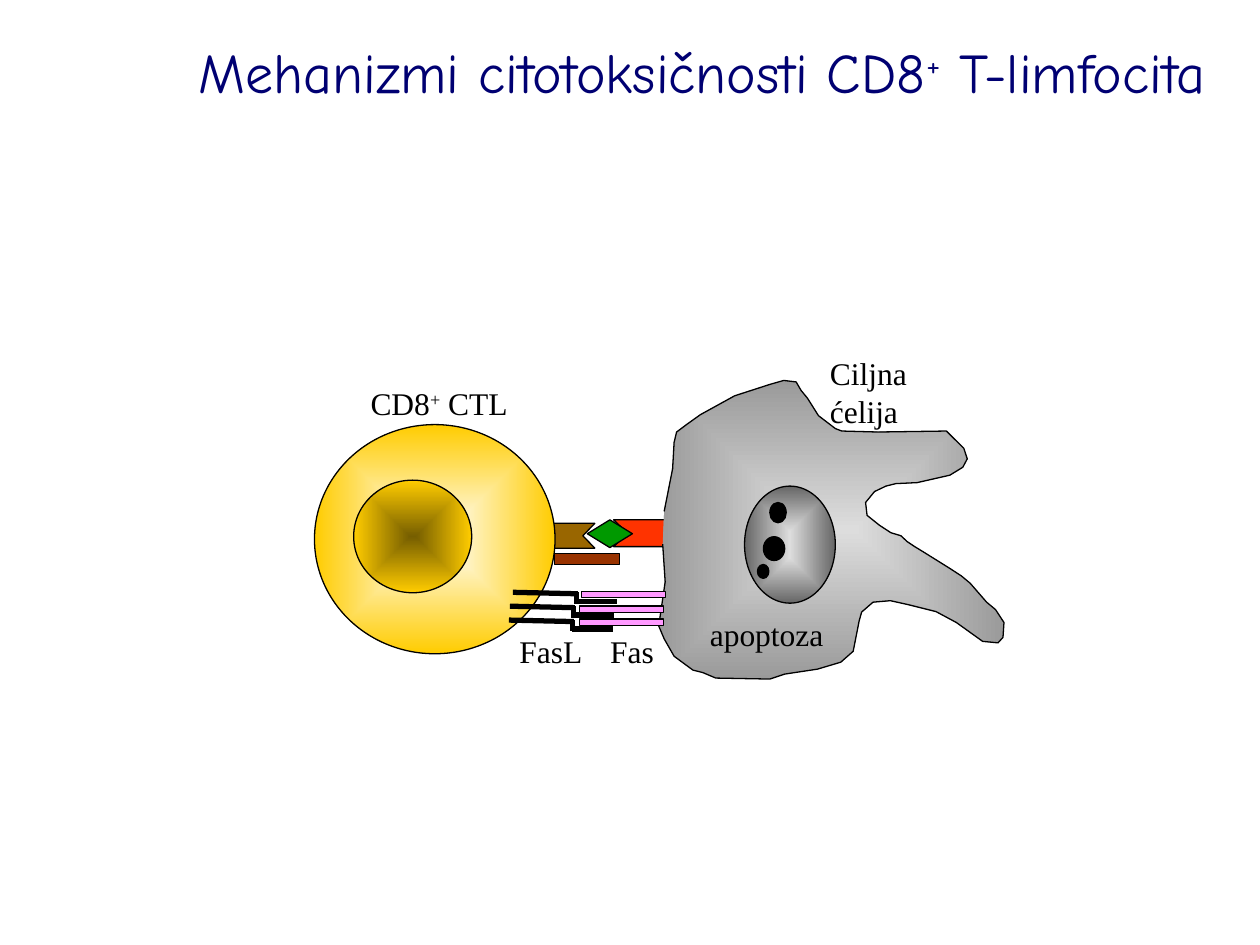
from lxml.etree import SubElement
from pptx import Presentation
from pptx.dml.color import RGBColor
from pptx.enum.shapes import MSO_CONNECTOR, MSO_SHAPE as SHAPE
from pptx.enum.text import MSO_ANCHOR, MSO_AUTO_SIZE, PP_ALIGN
from pptx.oxml.ns import qn
from pptx.util import Cm, Pt


def paint(s, fill):
    """Fill with one hex colour, or a (centre, rim, path) gradient, and outline in black."""
    s.shadow.inherit = False
    if isinstance(fill, str):
        s.fill.solid()
        s.fill.fore_color.rgb = RGBColor.from_string(fill)
    else:
        *colours, path_kind = fill
        s.fill.gradient()
        for stop, position, colour in zip(s.fill.gradient_stops, (0, 1), colours):
            stop.position = position
            stop.color.rgb = RGBColor.from_string(colour)
        grad = s._element.spPr.find(qn("a:gradFill"))
        grad.remove(grad.find(qn("a:lin")))
        path = SubElement(grad, qn("a:path"), {"path": path_kind})
        SubElement(path, qn("a:fillToRect"), dict.fromkeys("ltrb", "50000"))
    s.line.color.rgb = RGBColor.from_string("000000")
    s.line.width = Pt(0.75)


def write(tf, runs, size, font, colour):
    """Add the runs to the first paragraph; a lone + is superscript."""
    tf.word_wrap = True
    tf.auto_size = MSO_AUTO_SIZE.SHAPE_TO_FIT_TEXT
    for text in runs:
        r = tf.paragraphs[0].add_run()
        r.text = text
        r.font.size = Pt(size)
        r.font.name = font
        r.font.color.rgb = RGBColor.from_string(colour)
        if text == "+":
            r.font._element.set("baseline", "30000")


prs = Presentation()
prs.slide_width, prs.slide_height = Cm(25.4), Cm(19.05)
slide = prs.slides.add_slide(prs.slide_layouts[5])
shapes = slide.shapes

# Title
title = shapes.title
title.left, title.top, title.width, title.height = Cm(0.84), Cm(0.62), Cm(23.72), Cm(1.63)
title.fill.solid()
title.fill.fore_color.rgb = RGBColor.from_string("FFFFFF")
tf = title.text_frame
tf.vertical_anchor = MSO_ANCHOR.TOP
write(tf, ["Mehanizmi citotoksičnosti CD8", "+", " T-limfocita"], 32, "Comic Neue", "000072")
tf.paragraphs[0].alignment = PP_ALIGN.RIGHT

# Receptors between the cells
receptors = shapes.add_group_shape().shapes
for kind, x, y, w, h, fill, notch, turn in [
    (SHAPE.CHEVRON, 10.87, 10.55, 1.12, 0.5, "996600", 0.48, 180),
    (SHAPE.RECTANGLE, 11.18, 11.16, 1.31, 0.22, "993300", None, 0),
    (SHAPE.CHEVRON, 12.37, 10.48, 1.35, 0.54, "FF3300", 0.53, 0),
    (SHAPE.DIAMOND, 11.84, 10.48, 0.91, 0.56, "009900", None, 0),
]:
    s = receptors.add_shape(kind, Cm(x), Cm(y), Cm(w), Cm(h))
    if notch:
        s.adjustments[0] = notch
    s.rotation = turn
    paint(s, fill)

# T cell and its nucleus
for x, y, w, h, centre in [
    (6.34, 8.56, 4.85, 4.62, "FFFFFF"),
    (7.13, 9.68, 2.38, 2.27, "765E00"),
]:
    s = shapes.add_shape(SHAPE.OVAL, Cm(x), Cm(y), Cm(w), Cm(h))
    paint(s, (centre, "FFCC00", "shape"))

# Target cell
outline = [
    (13.39, 10.31), (13.56, 9.45), (13.59, 8.92), (13.64, 8.71), (13.84, 8.56),
    (14.12, 8.36), (14.81, 7.98), (15.52, 7.75), (15.8, 7.67), (16.05, 7.7),
    (16.15, 7.87), (16.28, 8.03), (16.5, 8.38), (16.84, 8.64), (16.97, 8.69),
    (17.7, 8.71), (19.08, 8.69), (19.43, 9.04), (19.5, 9.25), (19.41, 9.42),
    (19.15, 9.58), (18.49, 9.73), (18.06, 9.75), (17.86, 9.8), (17.63, 9.91),
    (17.45, 10.13), (17.48, 10.39), (17.73, 10.59), (17.96, 10.74), (18.16, 10.8),
    (18.29, 10.92), (18.44, 11.02), (18.62, 11.13), (19.15, 11.46), (19.38, 11.61),
    (19.56, 11.76), (19.89, 12.14), (20.07, 12.29), (20.24, 12.55), (20.22, 12.85),
    (20.12, 12.96), (19.81, 12.93), (19.28, 12.55), (18.87, 12.33), (18.31, 12.19),
    (17.95, 12.11), (17.6, 12.14), (17.37, 12.34), (17.32, 12.52), (17.2, 13.13),
    (16.95, 13.35), (16.48, 13.49), (15.82, 13.59), (15.52, 13.69), (14.43, 13.67),
    (14.17, 13.56), (13.97, 13.51), (13.59, 13.23), (13.39, 12.88), (13.28, 12.62),
    (13.41, 11.73), (13.36, 10.97),
]
points = [(Cm(x), Cm(y)) for x, y in outline]
builder = shapes.build_freeform(*points[0])
builder.add_line_segments(points[1:], close=False)
paint(builder.convert_to_shape(), ("DDDDDD", "9A9A9A", "rect"))

# Target cell nucleus with its fragments
nucleus = shapes.add_shape(SHAPE.OVAL, Cm(15.01), Cm(9.8), Cm(1.83), Cm(2.36))
paint(nucleus, ("DDDDDD", "666666", "shape"))
fragments = shapes.add_group_shape().shapes
for x, y, w, h in [
    (15.52, 10.13, 0.33, 0.41),
    (15.27, 11.38, 0.23, 0.28),
    (15.39, 10.82, 0.43, 0.48),
]:
    paint(fragments.add_shape(SHAPE.OVAL, Cm(x), Cm(y), Cm(w), Cm(h)), "000000")

# Labels, the first of them behind the strands and the others in front
for x, y, w, h, margin, runs in [
    (16.48, 7.01, 3.53, 1.78, 0.25, ["Ciljna ćelija"]),
    (10.47, 12.62, 1.88, 1.02, 0, ["FasL"]),
    (12.05, 12.62, 1.73, 1.02, 0.25, ["Fas"]),
    (14.06, 12.27, 3.81, 1.02, 0.25, ["apoptoza"]),
    (7.22, 7.62, 3.73, 1.02, 0.25, ["CD8", "+", " CTL"]),
]:
    tf = shapes.add_textbox(Cm(x), Cm(y), Cm(w), Cm(h)).text_frame
    tf.margin_left = tf.margin_right = Cm(margin)
    write(tf, runs, 18, "Times New Roman", "000000")

# Stepped FasL strands
for x, y in [(10.34, 11.94), (10.28, 12.22), (10.26, 12.5)]:
    for x1, y1, x2, y2 in [
        (0, 0, 1.31, 0.03), (1.28, 0, 1.28, 0.23), (1.28, 0.18, 2.1, 0.18),
    ]:
        strand = shapes.add_connector(
            MSO_CONNECTOR.STRAIGHT, Cm(x + x1), Cm(y + y1), Cm(x + x2), Cm(y + y2))
        strand.line.color.rgb = RGBColor.from_string("000000")
        strand.line.width = Pt(3)
        SubElement(strand._element.spPr, qn("a:effectLst"))

# Fas bars
for x, y in [(11.72, 11.92), (11.68, 12.22), (11.68, 12.48)]:
    paint(shapes.add_shape(SHAPE.RECTANGLE, Cm(x), Cm(y), Cm(1.7), Cm(0.13)), "FF99FF")

prs.save("out.pptx")
